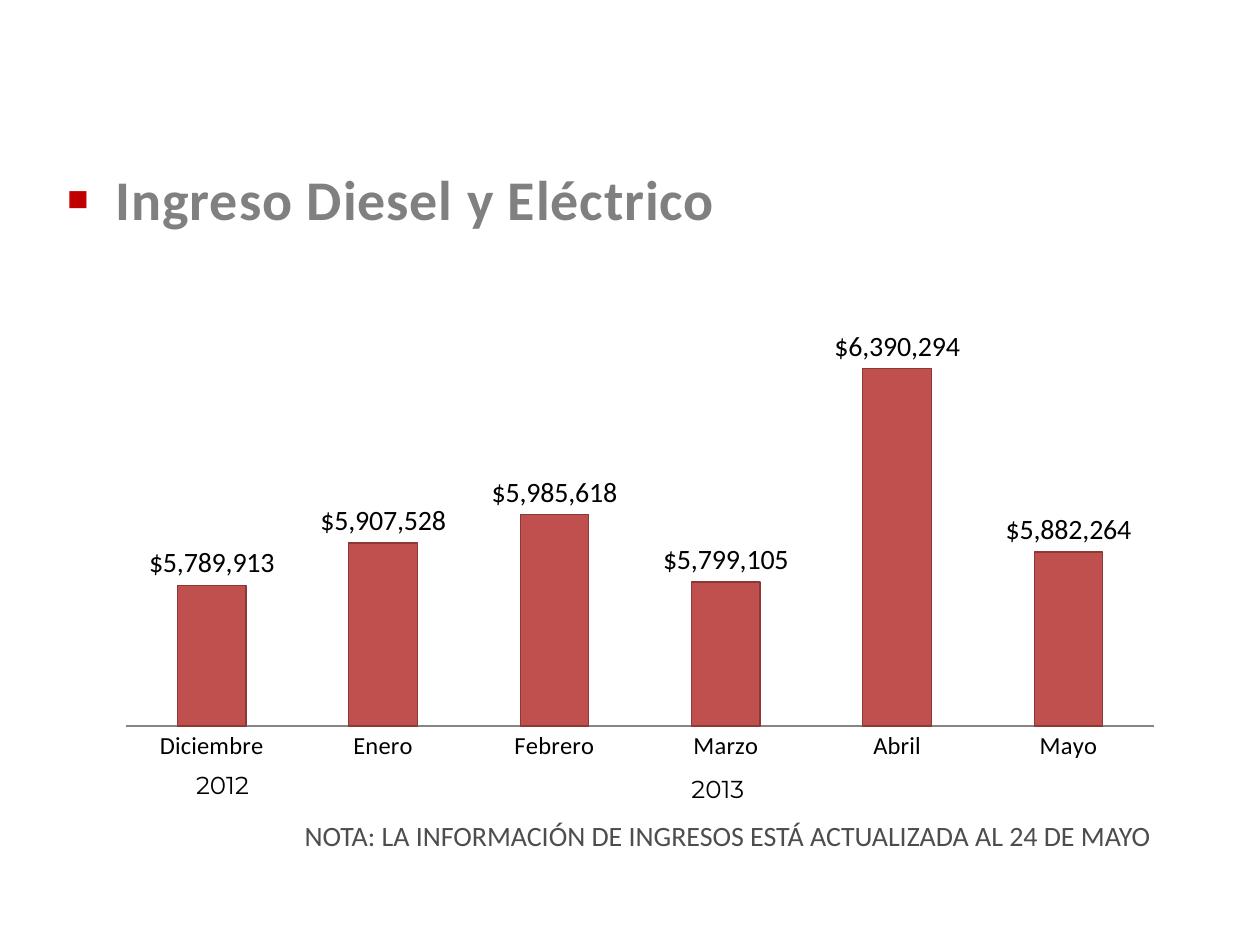
from pptx import Presentation
from pptx.chart.data import CategoryChartData
from pptx.dml.color import RGBColor
from pptx.enum.chart import XL_CHART_TYPE as ChartType, XL_LABEL_POSITION as LabelPos, XL_TICK_MARK as Tick
from pptx.enum.text import PP_ALIGN as Align
from pptx.oxml import parse_xml
from pptx.oxml.ns import nsdecls
from pptx.util import Pt

TITLE = "Ingreso Diesel y Eléctrico"
NOTE = "NOTA: LA INFORMACIÓN DE INGRESOS ESTÁ ACTUALIZADA AL 24 DE MAYO"
YEARS = [("2012", (105, 436.3, 62.6, 24.5)), ("2013", (388, 438.5, 62.6, 24.5))]
INCOME = {
    "Diciembre": 5789913,
    "Enero": 5907528,
    "Febrero": 5985618,
    "Marzo": 5799105,
    "Abril": 6390294,
    "Mayo": 5882264,
}
THEME = {
    "body": "Calibri", "year": "Montserrat",
    "title_size": 32, "note_size": 16, "label_size": 16, "axis_size": 14,
    "title": "808080", "bullet": "C00000", "text": "000000", "note": "4D4D4D",
    "bar": "C0504D", "bar_line": "8C3836", "axis": "868686",
}
SCALE = (5400000, 6600000)
PLOT = {"x": 0.02, "y": 0.02, "w": 0.96, "h": 0.89}


def rgb(name):
    return RGBColor.from_string(THEME[name])


def style_font(font, size, color="text", name="body", bold=False):
    font.name = THEME[name]
    font.size = Pt(THEME[size])
    font.bold = bold
    font.color.rgb = rgb(color)


def add_text(s, text, box, wrap=True, align=Align.LEFT, spacing=None, **fmt):
    tf = s.shapes.add_textbox(*map(Pt, box)).text_frame
    tf.word_wrap = wrap
    p = tf.paragraphs[0]
    p.alignment = align
    p.line_spacing = spacing
    r = p.add_run()
    r.text = text
    style_font(r.font, **fmt)
    return p


def add_bullet(p, indent):
    pPr = p._p.get_or_add_pPr()
    pPr.set("marL", str(Pt(indent)))
    pPr.set("indent", str(-Pt(indent)))
    for xml in (
        f'<a:buClr {nsdecls("a")}><a:srgbClr val="{THEME["bullet"]}"/></a:buClr>',
        f'<a:buSzPct {nsdecls("a")} val="120000"/>',
        f'<a:buFont {nsdecls("a")} typeface="{THEME["body"]}"/>',
        f'<a:buChar {nsdecls("a")} char="▪"/>',
    ):
        pPr.append(parse_xml(xml))


def add_income_chart(s, box):
    data = CategoryChartData(number_format='"$"#,##0')
    data.categories = list(INCOME)
    data.add_series("Ingreso", list(INCOME.values()))
    chart = s.shapes.add_chart(ChartType.COLUMN_CLUSTERED, *map(Pt, box), data).chart
    chart.has_legend = chart.has_title = False
    style_font(chart.font, "axis_size")

    cat = chart.category_axis
    cat.major_tick_mark = Tick.NONE
    cat.format.line.color.rgb = rgb("axis")
    style_font(cat.tick_labels.font, "axis_size")
    val = chart.value_axis
    val.minimum_scale, val.maximum_scale = SCALE
    val.has_major_gridlines = False
    val.visible = False

    plot = chart.plots[0]
    plot.gap_width = 150
    plot.vary_by_categories = False
    bars = plot.series[0].format
    bars.fill.solid()
    bars.fill.fore_color.rgb = rgb("bar")
    bars.line.color.rgb = rgb("bar_line")
    bars.line.width = Pt(0.75)

    plot.has_data_labels = True
    labels = plot.data_labels
    labels.show_value = True
    labels.position = LabelPos.OUTSIDE_END
    labels.number_format = '"$"#,##0'
    labels.number_format_is_linked = False
    style_font(labels.font, "label_size")

    modes = '<c:xMode val="edge"/><c:yMode val="edge"/>'
    sizes = "".join(f'<c:{k} val="{v}"/>' for k, v in PLOT.items())
    area = chart._chartSpace.chart.plotArea
    for old in area.findall("{*}layout"):
        area.remove(old)
    area.insert(0, parse_xml(
        f'<c:layout {nsdecls("c")}><c:manualLayout><c:layoutTarget val="inner"/>'
        f'{modes}{sizes}</c:manualLayout></c:layout>'))


def main():
    prs = Presentation()
    prs.slide_width, prs.slide_height = Pt(720), Pt(540)
    s = prs.slides.add_slide(prs.slide_layouts[6])
    title = add_text(s, TITLE, (31, 71.3, 663, 59.8), align=Align.JUSTIFY, spacing=1.5,
                     size="title_size", color="title", bold=True)
    title.runs[0].font._element.set("spc", "50")
    add_bullet(title, 28)
    for year, box in YEARS:
        add_text(s, year, box, size="axis_size", name="year")
    add_text(s, NOTE, (167, 464.4, 504.7, 26.6), wrap=False, size="note_size", color="note")
    add_income_chart(s, (59.8, 162, 612, 278))
    prs.save("out.pptx")


if __name__ == "__main__":
    main()
